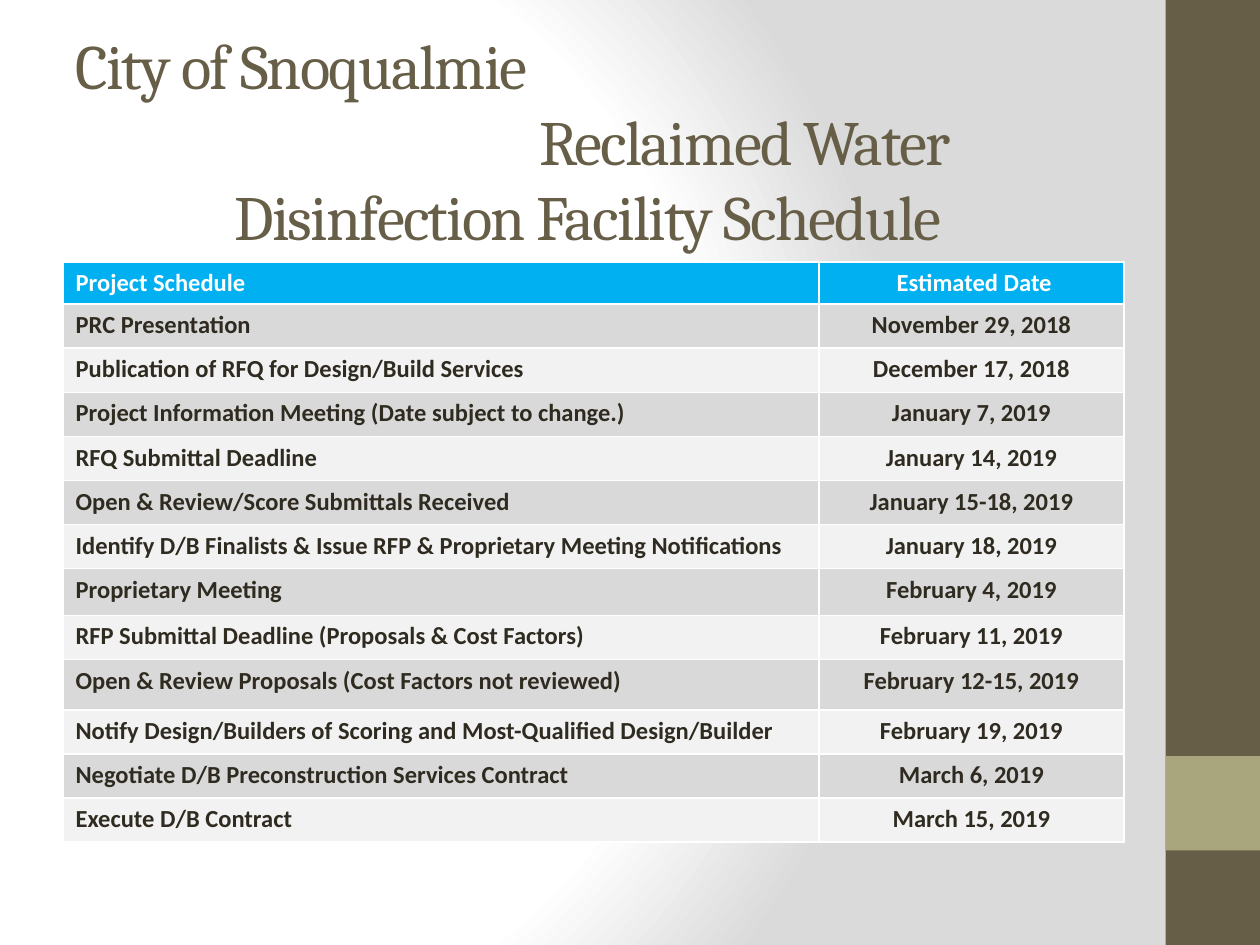
from lxml import etree
from pptx import Presentation
from pptx.dml.color import RGBColor
from pptx.enum import shapes, text
from pptx.oxml.ns import qn
from pptx.util import Inches, Pt

BROWN = RGBColor(0x67, 0x5E, 0x47)
OLIVE = RGBColor(0xA9, 0xA5, 0x7C)
WHITE = RGBColor(0xFF, 0xFF, 0xFF)
EDGE_GRAY = RGBColor(0xDA, 0xDA, 0xDA)
BLUE = RGBColor(0x00, 0xB0, 0xF0)
DARK = RGBColor(0x2F, 0x2B, 0x20)
BAND_DARK = RGBColor(0xD9, 0xD9, 0xD9)
BAND_LIGHT = RGBColor(0xF2, 0xF2, 0xF2)


def add_solid(parent, color):
    fill = etree.SubElement(parent, qn("a:solidFill"))
    etree.SubElement(fill, qn("a:srgbClr"), val=str(color))


def add_borders(cell):
    properties = cell._tc.get_or_add_tcPr()
    for side in ("a:lnL", "a:lnR", "a:lnT", "a:lnB"):
        add_solid(etree.SubElement(properties, qn(side), w=str(Pt(1))), WHITE)


prs = Presentation()
prs.slide_width, prs.slide_height = Inches(10), Inches(7.5)
slide = prs.slides.add_slide(prs.slide_layouts[6])

# Background: white glow fading to gray
slide.background.fill.gradient()
glow = slide.element.find(".//" + qn("a:gradFill"))
for child in list(glow):
    glow.remove(child)
stops = etree.SubElement(glow, qn("a:gsLst"))
for percent, color in ((0, WHITE), (75, WHITE), (100, EDGE_GRAY)):
    stop = etree.SubElement(stops, qn("a:gs"), pos=str(percent * 1000))
    etree.SubElement(stop, qn("a:srgbClr"), val=str(color))
circle = etree.SubElement(glow, qn("a:path"), path="circle")
etree.SubElement(circle, qn("a:fillToRect"), l="20000", t="50000", r="100000", b="50000")

# Side band
for top, height, color in ((0, 7.5, BROWN), (6, 0.75, OLIVE)):
    band = slide.shapes.add_shape(
        shapes.MSO_SHAPE.RECTANGLE, Inches(9.25), Inches(top), Inches(0.75), Inches(height))
    band.shadow.inherit = False
    band.fill.solid()
    band.fill.fore_color.rgb = color
    band.line.fill.background()

# Title
title = slide.shapes.add_textbox(Inches(0.5), Inches(0.3), Inches(8.33), Inches(1.62)).text_frame
title.word_wrap = True
title.vertical_anchor = text.MSO_ANCHOR.MIDDLE
title.text = "City of Snoqualmie\nReclaimed Water\nDisinfection Facility Schedule"
alignments = (text.PP_ALIGN.LEFT, text.PP_ALIGN.LEFT, text.PP_ALIGN.CENTER)
for line, alignment, indent in zip(title.paragraphs, alignments, (0, 3.68, 0)):
    line.alignment = alignment
    line._p.get_or_add_pPr().set("marL", str(Inches(indent)))
    font = line.runs[0].font
    font.name, font.size = "Cambria", Pt(36)
    font.color.rgb = BROWN
    line.runs[0]._r.get_or_add_rPr().set("spc", "-100")

# Schedule: task, date, row height
schedule = [
    ("Project Schedule", " Estimated Date", 0.33),
    ("PRC Presentation", "November 29, 2018", 0.35),
    ("Publication of RFQ for Design/Build Services", "December 17, 2018", 0.35),
    ("Project Information Meeting (Date subject to change.)", "January 7, 2019", 0.35),
    ("RFQ Submittal Deadline", "January 14, 2019", 0.35),
    ("Open & Review/Score Submittals Received", "January 15-18, 2019", 0.35),
    ("Identify D/B Finalists & Issue RFP & Proprietary Meeting Notifications",
     "January 18, 2019", 0.35),
    ("Proprietary Meeting", "February 4, 2019", 0.37),
    ("RFP Submittal Deadline (Proposals & Cost Factors)", "February 11, 2019", 0.35),
    ("Open & Review Proposals (Cost Factors not reviewed)", "February 12-15, 2019", 0.4),
    ("Notify Design/Builders of Scoring and Most-Qualified Design/Builder",
     "February 19, 2019", 0.35),
    ("Negotiate D/B Preconstruction Services Contract", "March 6, 2019", 0.35),
    ("Execute D/B Contract", "March 15, 2019", 0.35),
]
table = slide.shapes.add_table(
    len(schedule), 2, Inches(0.5), Inches(2.08), Inches(8.42), Inches(4.59)).table
table.columns[0].width, table.columns[1].width = Inches(6), Inches(2.42)
for r, (task, date, height) in enumerate(schedule):
    table.rows[r].height = Inches(height)
    row_fill = BLUE if r == 0 else BAND_DARK if r % 2 else BAND_LIGHT
    for c, wording in enumerate((task, date)):
        cell = table.cell(r, c)
        add_borders(cell)
        cell.fill.solid()
        cell.fill.fore_color.rgb = row_fill
        cell.text_frame.text = wording
        entry = cell.text_frame.paragraphs[0]
        entry.alignment = text.PP_ALIGN.CENTER if c else text.PP_ALIGN.LEFT
        font = entry.runs[0].font
        font.name, font.size, font.bold = "Calibri", Pt(14), True
        font.color.rgb = DARK if r else WHITE

prs.save("out.pptx")
